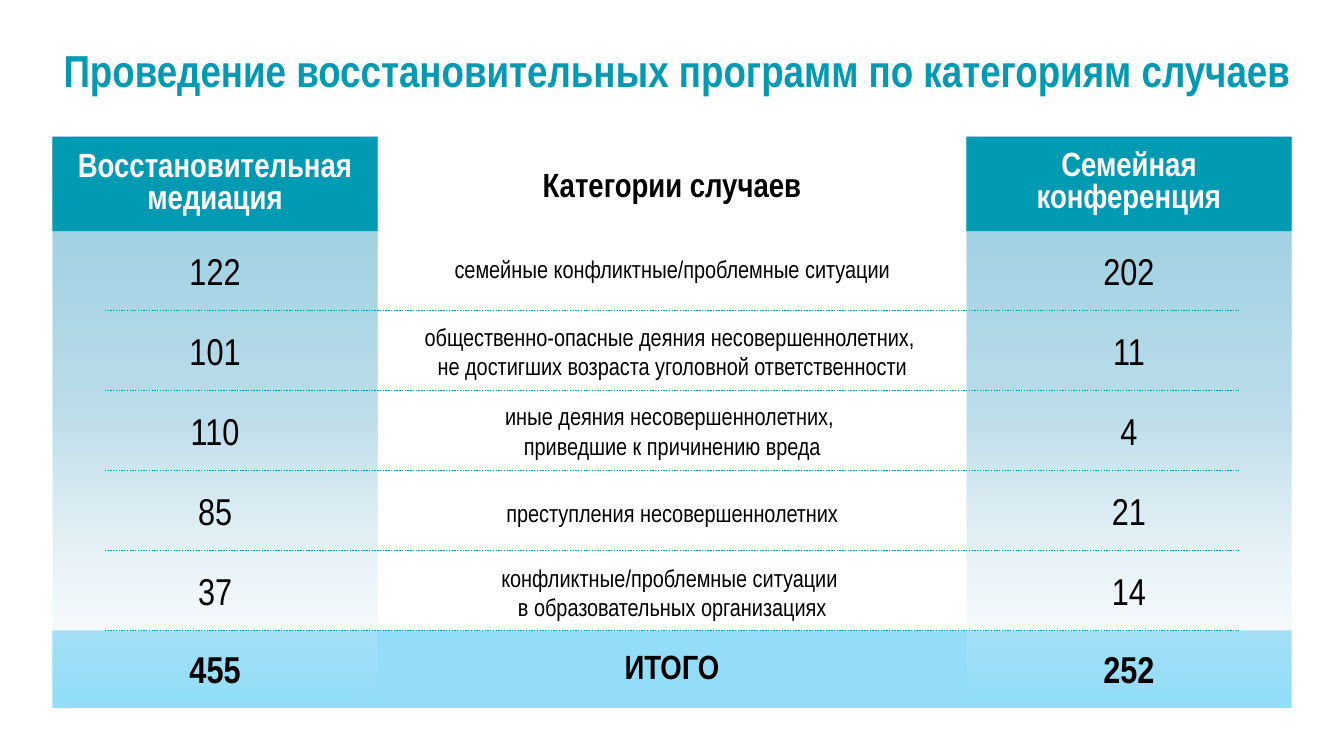
from lxml.etree import SubElement
from pptx import Presentation
from pptx.dml.color import RGBColor
from pptx.enum.dml import MSO_LINE
from pptx.enum.shapes import MSO_CONNECTOR, MSO_SHAPE
from pptx.enum.text import MSO_ANCHOR, MSO_AUTO_SIZE, PP_ALIGN
from pptx.oxml.ns import qn
from pptx.util import Inches, Pt

FONT = "Arial Narrow"
TEAL, BLUE, WHITE, BLACK = "009AB3", "00B0F0", "FFFFFF", "000000"
FADE = [(0, "91CBE0", 100), (50, "BDDDEA", 100), (100, "DFEEF4", 0)]

LEFT_COL, RIGHT_COL, COL_W = 0.39, 7.19, 2.42
TABLE_W = RIGHT_COL + COL_W - LEFT_COL
HEAD_TOP = 1.02
FIRST_ROW, TOTAL_ROW = 1.8, 4.76
FIRST_DIVIDER, TOTAL_BAR = 2.31, 4.69
NUMBER_W = 1.02

# mediation count, family conference count, category, category top, height
ROWS = [
    ("122", "202", "семейные конфликтные/проблемные ситуации", 1.84, 0.32),
    ("101", "11", "общественно-опасные деяния несовершеннолетних, \v"
     "не достигших возраста уголовной ответственности", 2.35, 0.54),
    ("110", "4", "иные деяния несовершеннолетних, \n"
     "приведшие к причинению вреда", 2.94, 0.54),
    ("85", "21", "преступления несовершеннолетних", 3.66, 0.32),
    ("37", "14", "конфликтные/проблемные ситуации \n"
     "в образовательных организациях", 4.14, 0.54),
]
ROW_H = (TOTAL_BAR - FIRST_DIVIDER) / (len(ROWS) - 1)


def rgb(value):
    return RGBColor.from_string(value)


def set_alpha(color, percent):
    SubElement(color, qn("a:alpha")).set("val", str(percent * 1000))


def format_text(tf, size, color=BLACK, bold=False, spacing=None):
    for p in tf.paragraphs:
        p.alignment = PP_ALIGN.CENTER
        if spacing:
            p.line_spacing = spacing
        p.font.name = FONT
        p.font.size = Pt(size)
        p.font.bold = bold
        p.font.color.rgb = rgb(color)


def add_title(s, text):
    title = s.shapes.title
    title.left, title.top = Inches(0), Inches(0.1)
    title.width, title.height = Inches(10), Inches(0.84)
    tf = title.text_frame
    tf.text = text
    tf.vertical_anchor = MSO_ANCHOR.MIDDLE
    format_text(tf, 24, TEAL, bold=True)


def add_text(s, text, x, y, w, h, size, **style):
    tf = s.shapes.add_textbox(Inches(x), Inches(y), Inches(w), Inches(h)).text_frame
    tf.word_wrap = True
    tf.auto_size = MSO_AUTO_SIZE.SHAPE_TO_FIT_TEXT
    tf.text = text
    format_text(tf, size, **style)


def add_rect(s, x, y, w, h):
    sp = s.shapes.add_shape(MSO_SHAPE.RECTANGLE, Inches(x), Inches(y),
                            Inches(w), Inches(h))
    sp.shadow.inherit = False
    sp.line.fill.background()
    return sp


def fill_solid(sp, color, alpha=100):
    sp.fill.solid()
    sp.fill.fore_color.rgb = rgb(color)
    if alpha < 100:
        set_alpha(next(sp._element.spPr.iter(qn("a:srgbClr"))), alpha)


def fill_fade(sp, stops):
    """Fill from top to bottom with (position, colour, opacity) stops."""
    sp.fill.gradient()
    sp.fill.gradient_angle = 270
    stop_list = next(sp._element.spPr.iter(qn("a:gsLst")))
    for stop in list(stop_list):
        stop_list.remove(stop)
    for position, value, alpha in stops:
        stop = SubElement(stop_list, qn("a:gs"))
        stop.set("pos", str(position * 1000))
        color = SubElement(stop, qn("a:srgbClr"))
        color.set("val", value)
        set_alpha(color, alpha)


def add_column(s, x):
    fill_fade(add_rect(s, x, HEAD_TOP, COL_W, 4.14), FADE)
    fill_solid(add_rect(s, x, HEAD_TOP, COL_W, 0.7), TEAL)


def add_numbers(s, mediation, conference, y, bold=False):
    for x, text in ((LEFT_COL, mediation), (RIGHT_COL, conference)):
        add_text(s, text, x + (COL_W - NUMBER_W) / 2, y, NUMBER_W, 0.44, 20,
                 bold=bold)


def add_divider(s, y):
    line = s.shapes.add_connector(MSO_CONNECTOR.STRAIGHT, Inches(0.78), Inches(y),
                                  Inches(9.22), Inches(y))
    line.line.color.rgb = rgb(TEAL)
    line.line.width = Pt(0.75)
    line.line.dash_style = MSO_LINE.ROUND_DOT
    SubElement(line._element.spPr, qn("a:effectLst"))


def main():
    prs = Presentation()
    prs.slide_width = Inches(10)
    prs.slide_height = prs.slide_width * 9 // 16
    s = prs.slides.add_slide(prs.slide_layouts[5])
    add_title(s, " Проведение восстановительных программ по категориям случаев")

    fill_solid(add_rect(s, LEFT_COL, TOTAL_BAR, TABLE_W, 0.58), BLUE, alpha=42)
    for x, y, heading in ((LEFT_COL, 1.08, "Восстановительная медиация"),
                          (RIGHT_COL, 1.07, "Семейная конференция")):
        add_column(s, x)
        add_text(s, heading, x, y, COL_W, 0.59, 18, color=WHITE, bold=True,
                 spacing=0.8)
    add_text(s, "Категории случаев", 2.42, 1.17, 5.16, 0.4, 18, bold=True)

    for i, (mediation, conference, category, top, height) in enumerate(ROWS):
        add_numbers(s, mediation, conference, FIRST_ROW + i * ROW_H)
        add_text(s, category, 2.86, top, 4.28, height, 13)
        add_divider(s, FIRST_DIVIDER + i * ROW_H)

    add_numbers(s, "455", "252", TOTAL_ROW, bold=True)
    add_text(s, "ИТОГО", 4.4, TOTAL_ROW, 1.2, 0.4, 18, bold=True)
    prs.save("out.pptx")


if __name__ == "__main__":
    main()
